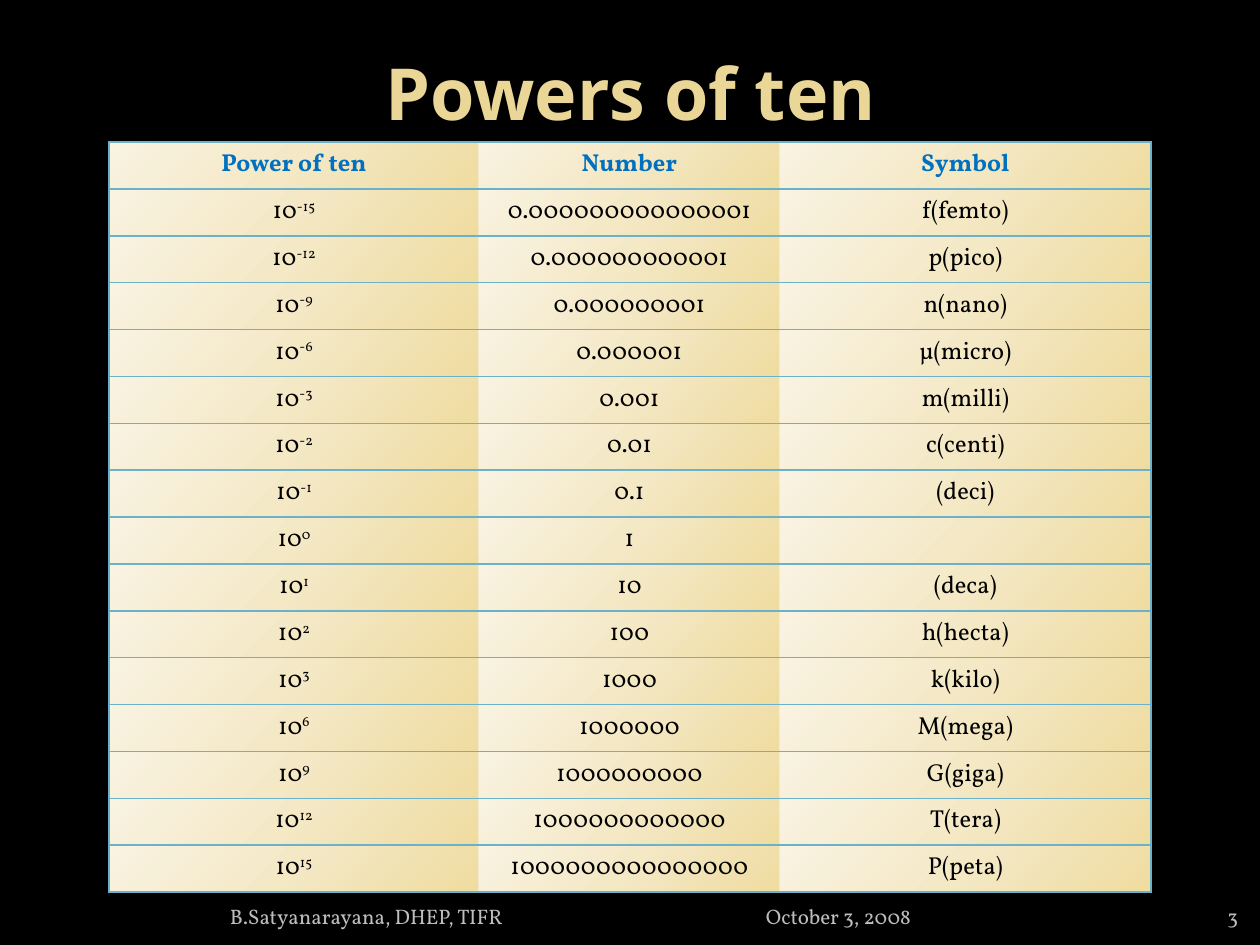
from typing import NamedTuple

from lxml.etree import SubElement
from pptx import Presentation
from pptx.dml.color import RGBColor
from pptx.enum.text import MSO_ANCHOR as Anchor, MSO_AUTO_SIZE as AutoSize, PP_ALIGN as Align
from pptx.oxml.ns import qn
from pptx.util import Emu, Pt

EMU_PER_PX = 914400 / 126
BODY_FONT = "Vollkorn"
FOOTER_COLOR = "BDBDBD"
BORDER_COLOR = "6BB1C9"
CELL_STOPS = ((0, "EFDCA0"), (50, "F4E8C5"), (100, "F9F3E2"))
PLAIN_TABLE_STYLE = "{2D5ABB26-0587-4C30-8999-92F81FD0307C}"
HEADINGS = ("Power of ten", "Number", "Symbol")
COLUMN_WIDTHS = (370, 301, 371)


class Box(NamedTuple):
    left: int
    top: int
    width: int
    height: int


class Power(NamedTuple):
    exponent: int
    symbol: str

    @property
    def number(self) -> str:
        """Return the power written out in decimal digits."""
        if self.exponent < 0:
            return "0." + "0" * (-self.exponent - 1) + "1"
        return str(10**self.exponent)


TITLE_BOX = Box(23, 13, 1216, 157)
TABLE_BOX = Box(109, 142, sum(COLUMN_WIDTHS), 745)
FOOTER_BOX = Box(20, 885, 1103, 50)
NUMBER_BOX = Box(1134, 885, 104, 50)
FOOTER_INDENT = 210
DATE_TAB = 536

POWERS = (
    Power(-15, "f(femto)"),
    Power(-12, "p(pico)"),
    Power(-9, "n(nano)"),
    Power(-6, "µ(micro)"),
    Power(-3, "m(milli)"),
    Power(-2, "c(centi)"),
    Power(-1, "(deci)"),
    Power(0, ""),
    Power(1, "(deca)"),
    Power(2, "h(hecta)"),
    Power(3, "k(kilo)"),
    Power(6, "M(mega)"),
    Power(9, "G(giga)"),
    Power(12, "T(tera)"),
    Power(15, "P(peta)"),
)


def px(length: int) -> Emu:
    """Turn pixels into EMU."""
    return Emu(round(length * EMU_PER_PX))


def rgb(color: str) -> RGBColor:
    """Turn a hex string into a colour."""
    return RGBColor.from_string(color)


def place(box: Box) -> tuple[Emu, ...]:
    """Return the left, top, width and height of a box in EMU."""
    return tuple(px(length) for length in box)


def write(paragraph, text: str, *, size=14, font=BODY_FONT, color="000000",
          bold=False, align=Align.CENTER, superscript="") -> None:
    """Write formatted text, with an optional superscript after it."""
    paragraph.alignment = align
    for part in filter(None, (text, superscript)):
        run = paragraph.add_run()
        run.text = part
        run.font.size = Pt(size)
        run.font.name = font
        run.font.bold = bold
        run.font.color.rgb = rgb(color)
    if superscript:
        run.font._element.set("baseline", "30000")
    if not text:
        ending = SubElement(paragraph._p, qn("a:endParaRPr"), sz=str(size * 100))
        SubElement(ending, qn("a:latin"), typeface=font)


def add_color(parent, color: str) -> None:
    """Append a hex colour to an XML element."""
    SubElement(parent, qn("a:srgbClr"), val=color)


def style_cell(cell, sides: str) -> None:
    """Give a table cell its borders and its diagonal gradient."""
    cell.vertical_anchor = Anchor.MIDDLE
    properties = cell._tc.get_or_add_tcPr()
    for side in sides:
        line = SubElement(properties, qn(f"a:ln{side}"), w=str(Pt(1)))
        add_color(SubElement(line, qn("a:solidFill")), BORDER_COLOR)
    gradient = SubElement(properties, qn("a:gradFill"), rotWithShape="1")
    stops = SubElement(gradient, qn("a:gsLst"))
    for position, color in CELL_STOPS:
        add_color(SubElement(stops, qn("a:gs"), pos=str(position * 1000)), color)
    SubElement(gradient, qn("a:lin"), ang=str(225 * 60000), scaled="0")


def add_title(slide, text: str) -> None:
    """Fill the title placeholder."""
    title = slide.shapes.title
    title.left, title.top, title.width, title.height = place(TITLE_BOX)
    frame = title.text_frame
    frame.auto_size = AutoSize.NONE
    frame.vertical_anchor = Anchor.MIDDLE
    write(frame.paragraphs[0], text, size=41, font="Open Sans", color="EAD696", bold=True)


def add_powers_table(slide) -> None:
    """Add the table of powers, numbers and symbols."""
    row_count = len(POWERS) + 1
    shape = slide.shapes.add_table(row_count, len(HEADINGS), *place(TABLE_BOX))
    table = shape.table
    table.first_row = table.horz_banding = False
    table._tbl.tblPr.find(qn("a:tableStyleId")).text = PLAIN_TABLE_STYLE
    for column, width in zip(table.columns, COLUMN_WIDTHS):
        column.width = px(width)
    for row in table.rows:
        row.height = px(TABLE_BOX.height) // row_count
        for cell, sides in zip(row.cells, ("LTB", "TB", "RTB")):
            style_cell(cell, sides)
    for index, heading in enumerate(HEADINGS):
        write(table.cell(0, index).text_frame.paragraphs[0], heading,
              color="0070C0", bold=True)
    for index, power in enumerate(POWERS, start=1):
        base, number, symbol = (
            table.cell(index, column).text_frame.paragraphs[0] for column in range(3)
        )
        write(base, "10", superscript=str(power.exponent))
        write(number, power.number)
        write(symbol, power.symbol)


def add_footer(slide, box: Box, text: str, align: Align, indent: int = 0):
    """Add one footer text box and return its paragraph."""
    frame = slide.shapes.add_textbox(*place(box)).text_frame
    frame.word_wrap = True
    frame.vertical_anchor = Anchor.BOTTOM
    frame.margin_left, frame.margin_right = px(indent), 0
    paragraph = frame.paragraphs[0]
    write(paragraph, text, size=12, color=FOOTER_COLOR, align=align)
    return paragraph


def main() -> None:
    """Build the slide and save it."""
    presentation = Presentation()
    presentation.slide_width, presentation.slide_height = px(1260), px(945)
    slide = presentation.slides.add_slide(presentation.slide_layouts[5])
    slide.background.fill.solid()
    slide.background.fill.fore_color.rgb = rgb("000000")
    add_title(slide, "Powers of ten")
    add_powers_table(slide)
    footer = add_footer(slide, FOOTER_BOX, "B.Satyanarayana, DHEP, TIFR\tOctober 3, 2008",
                        Align.LEFT, FOOTER_INDENT)
    tabs = SubElement(footer._p.get_or_add_pPr(), qn("a:tabLst"))
    SubElement(tabs, qn("a:tab"), pos=str(px(DATE_TAB)), algn="l")
    add_footer(slide, NUMBER_BOX, "3", Align.RIGHT)
    presentation.save("out.pptx")


if __name__ == "__main__":
    main()
